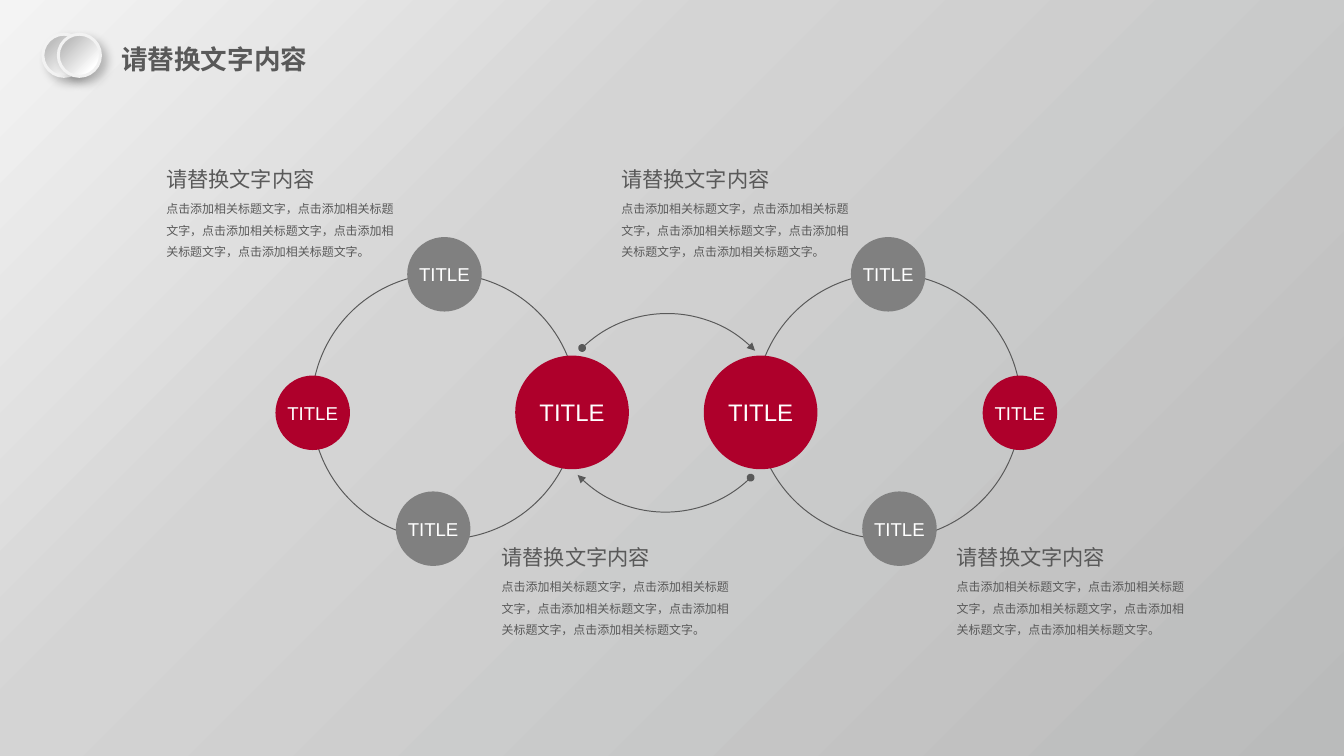
from lxml import etree
from pptx import Presentation
from pptx.dml.color import RGBColor
from pptx.enum.shapes import MSO_SHAPE
from pptx.enum.text import MSO_ANCHOR, MSO_AUTO_SIZE, PP_ALIGN
from pptx.oxml.ns import qn
from pptx.util import Cm, Pt

OVAL, ARC = MSO_SHAPE.OVAL, MSO_SHAPE.ARC
MIDDLE = MSO_ANCHOR.MIDDLE
FIT_SHAPE = MSO_AUTO_SIZE.SHAPE_TO_FIT_TEXT
CENTER, LEFT = PP_ALIGN.CENTER, PP_ALIGN.LEFT

RED = RGBColor(0xAE, 0x00, 0x2B)
GRAY = RGBColor(0x80, 0x80, 0x80)
DARK = RGBColor(0x59, 0x59, 0x59)
WHITE = RGBColor(0xFF, 0xFF, 0xFF)
RIM = RGBColor(0xF2, 0xF2, 0xF2)
BLACK = RGBColor(0x00, 0x00, 0x00)
SILVER = RGBColor(0xBF, 0xBF, 0xBF)
BACKGROUND_STOPS = [(0, RGBColor(0xF4, 0xF4, 0xF4)), (35, RGBColor(0xD4, 0xD4, 0xD4)),
                    (100, RGBColor(0xBA, 0xBB, 0xBB))]
COIN_STOPS = [(20, SILVER), (80, WHITE), (100, WHITE)]

HEADING = "请替换文字内容"
BODY = "，".join(["点击添加相关标题文字"] * 5) + "。"

MIRROR_SPAN = 35.41  # left and right centres of a mirrored pair add up to this
RING = (11.81, 10.8, 7.06)
HUB = (15.2, 10.96, 3.02)
SATELLITES = [(8.31, 10.97, RED), (11.81, 7.29, GRAY), (11.51, 14.05, GRAY)]
SATELLITE_SIZE = 1.98
ARROWS = [(17.73, 11.58, 315.9), (17.68, 10.36, 135.9)]
ARROW_SIZE = 6.5
NOTE_ROWS = [(13.08, 14.33), (4.17, 4.29)]
NOTE_PITCH = 12.09
COIN_CENTERS = [1.7, 2.11]


def write_text(text_frame, text, size, color=DARK, font="Calibri", bold=False,
               align=LEFT, spacing=None):
    paragraph = text_frame.paragraphs[0]
    paragraph.alignment = align
    if spacing:
        paragraph.line_spacing = spacing
    run = paragraph.add_run()
    run.text = text
    run.font.size = Pt(size)
    run.font.name = font
    run.font.bold = bold
    run.font.color.rgb = color


def add_color(parent, color, alpha=None):
    element = etree.SubElement(parent, qn("a:srgbClr"), val=str(color))
    if alpha is not None:
        etree.SubElement(element, qn("a:alpha"), val=str(alpha * 1000))


def set_gradient(fill, owner, stops):
    """Fill diagonally from top left to bottom right; owner is the element that holds the fill."""
    fill.gradient()
    fill.gradient_angle = 315
    stop_list = owner.find(".//" + qn("a:gsLst"))
    stop_list.clear()
    for position, color in stops:
        stop = etree.SubElement(stop_list, qn("a:gs"), pos=str(position * 1000))
        add_color(stop, color)


class InfinityDiagram:
    """Holds the slide and its drawing style; round elements are placed by centre, in cm."""

    def __init__(self, slide):
        self.slide = slide
        self.line_width = Pt(0.75)
        self.label_font = "Arial"

    def background(self, stops):
        set_gradient(self.slide.background.fill, self.slide.element, stops)

    def round_shape(self, kind, x, y, size):
        shape = self.slide.shapes.add_shape(
            kind, Cm(x - size / 2), Cm(y - size / 2), Cm(size), Cm(size))
        shape.shadow.inherit = False
        return shape

    def outline(self, kind, x, y, size):
        shape = self.round_shape(kind, x, y, size)
        shape.fill.background()
        shape.line.color.rgb = DARK
        shape.line.width = self.line_width
        return shape

    def disc(self, x, y, size, color, text_size):
        shape = self.round_shape(OVAL, x, y, size)
        shape.fill.solid()
        shape.fill.fore_color.rgb = color
        shape.line.fill.background()
        frame = shape.text_frame
        frame.margin_left = frame.margin_right = frame.margin_top = frame.margin_bottom = 0
        frame.vertical_anchor = MIDDLE
        write_text(frame, "TITLE", text_size, WHITE, self.label_font, align=CENTER)

    def arrow(self, x, y, size, rotation):
        shape = self.outline(ARC, x, y, size)
        shape.rotation = rotation
        line = shape.element.find(".//" + qn("a:ln"))
        etree.SubElement(line, qn("a:headEnd"), type="oval")
        etree.SubElement(line, qn("a:tailEnd"), type="triangle")

    def coin(self, x, y, size):
        shape = self.round_shape(OVAL, x, y, size)
        set_gradient(shape.fill, shape.element, COIN_STOPS)
        shape.line.color.rgb = RIM
        shape.line.width = Pt(2.25)
        effects = shape.element.find(".//" + qn("a:effectLst"))
        shadow = etree.SubElement(effects, qn("a:outerShdw"), blurRad=str(Pt(7)),
                                  dist=str(Pt(5.9)), dir="2700000", algn="tl", rotWithShape="0")
        add_color(shadow, BLACK, alpha=23)

    def text(self, left, top, width, height, text, size, wrap=False, **text_format):
        box = self.slide.shapes.add_textbox(Cm(left), Cm(top), Cm(width), Cm(height))
        box.text_frame.word_wrap = wrap
        box.text_frame.auto_size = FIT_SHAPE
        write_text(box.text_frame, text, size, **text_format)

    def note(self, left, top):
        self.text(left, top + 0.76, 6.55, 1.98, BODY, 9, wrap=True,
                  font=self.label_font, spacing=1.5)
        self.text(left, top, 4.5, 0.94, HEADING, 16)

    def loop(self, place_x):
        """Draw a ring with its discs; place_x maps left-hand centres to this side."""
        x, y, size = RING
        self.outline(OVAL, place_x(x), y, size)
        x, y, size = HUB
        self.disc(place_x(x), y, size, RED, 18)
        for x, y, color in SATELLITES:
            self.disc(place_x(x), y, SATELLITE_SIZE, color, 14)


def main():
    presentation = Presentation()
    presentation.slide_width = Cm(35.71)
    presentation.slide_height = Cm(20.09)
    diagram = InfinityDiagram(presentation.slides.add_slide(presentation.slide_layouts[6]))

    diagram.background(BACKGROUND_STOPS)
    diagram.loop(lambda x: x)
    diagram.loop(lambda x: MIRROR_SPAN - x)
    for x, y, rotation in ARROWS:
        diagram.arrow(x, y, ARROW_SIZE, rotation)
    for left, top in NOTE_ROWS:
        for column in range(2):
            diagram.note(left + column * NOTE_PITCH, top)
    diagram.text(2.97, 1.02, 5.51, 1.12, HEADING, 20, bold=True)
    for x in COIN_CENTERS:
        diagram.coin(x, 1.47, 1.12)

    presentation.save("out.pptx")


if __name__ == "__main__":
    main()
